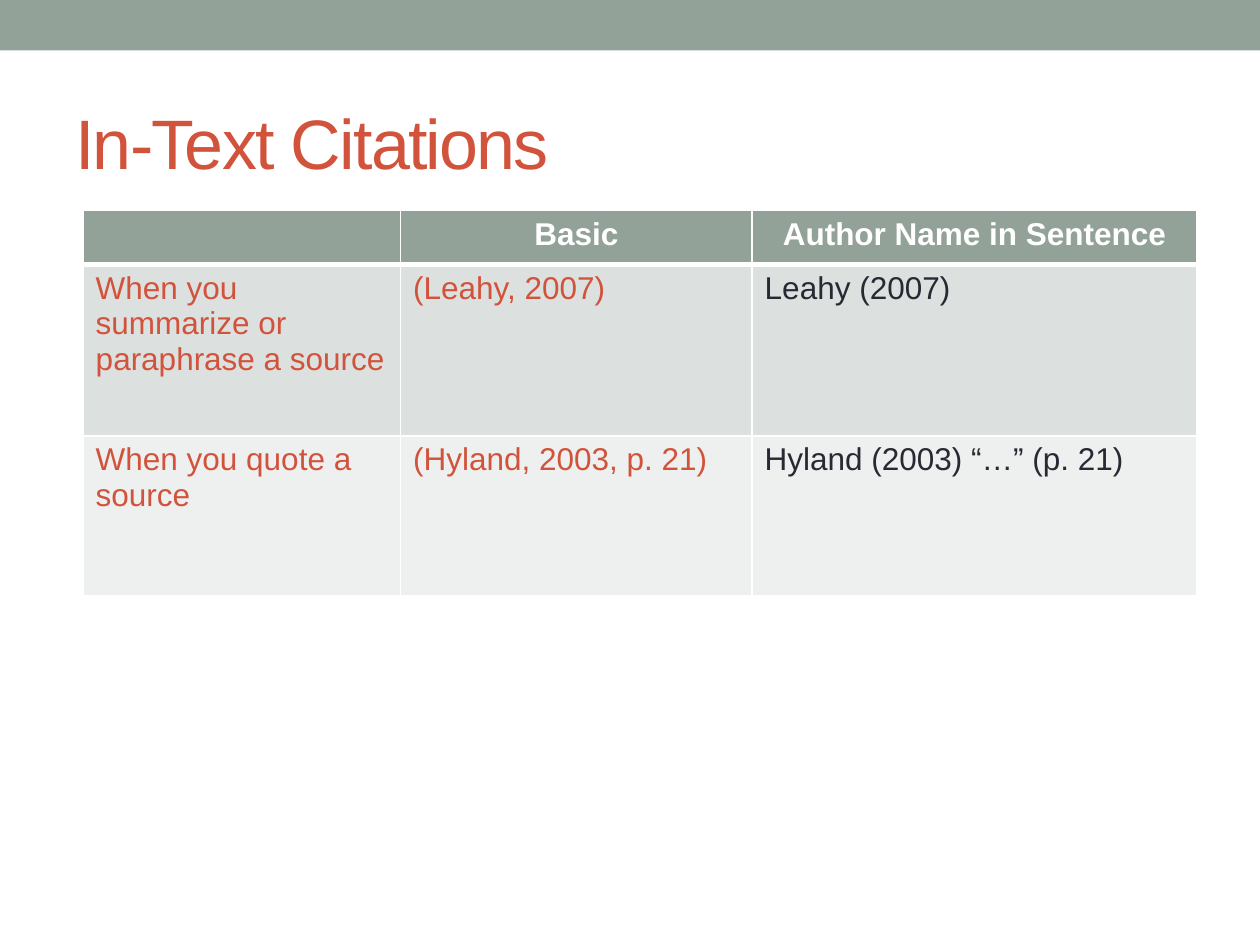
from pptx import Presentation
from pptx.dml.color import RGBColor
from pptx.enum.shapes import MSO_SHAPE as Shape
from pptx.enum.text import MSO_ANCHOR as Anchor, PP_ALIGN as Align
from pptx.oxml import parse_xml
from pptx.oxml.ns import nsdecls
from pptx.util import Inches, Pt

FONT = "Arial"
SAGE = RGBColor(0x93, 0xA2, 0x99)
RUST = RGBColor(0xD2, 0x53, 0x3C)
INK = RGBColor(0x29, 0x29, 0x34)
WHITE = RGBColor(0xFF, 0xFF, 0xFF)
ROW_FILLS = [SAGE, RGBColor(0xDC, 0xE0, 0xDE), RGBColor(0xEE, 0xF0, 0xEF)]

COLUMN_WIDTHS = [2.52, 2.79, 3.53]
ROW_HEIGHTS = [0.43, 1.36, 1.27]
CITATIONS = [
    ["", "Basic", "Author Name in Sentence"],
    ["When you summarize or paraphrase a source", "(Leahy, 2007)", "Leahy (2007)"],
    ["When you quote a source", "(Hyland, 2003, p. 21)", "Hyland (2003) “…” (p. 21)"],
]


def style_font(font, size, color, bold=False):
    font.name = FONT
    font.size = Pt(size)
    font.bold = bold
    font.color.rgb = color


def add_top_band(slide):
    band = slide.shapes.add_shape(Shape.RECTANGLE, 0, 0, Inches(10), Inches(0.4))
    band.shadow.inherit = False
    band.fill.solid()
    band.fill.fore_color.rgb = SAGE
    band.line.fill.background()


def add_title(slide, wording):
    title = slide.shapes.add_textbox(Inches(0.5), Inches(0.58), Inches(9), Inches(1.08))
    frame = title.text_frame
    frame.word_wrap = True
    frame.vertical_anchor = Anchor.MIDDLE
    frame.text = wording
    font = frame.paragraphs[0].runs[0].font
    style_font(font, 40, RUST)
    font._element.set("spc", "-100")  # letter spacing of -1 pt


def set_borders(cell, widths):
    """Draw white borders; widths are points for left, right, top, bottom."""
    properties = cell._tc.get_or_add_tcPr()
    for position, (side, width) in enumerate(zip("LRTB", widths)):
        border = parse_xml(
            f'<a:ln{side} {nsdecls("a")} w="{Pt(width)}"><a:solidFill>'
            f'<a:srgbClr val="{WHITE}"/></a:solidFill></a:ln{side}>'
        )
        properties.insert(position, border)


def fill_cell(cell, wording, row, column):
    is_header = row == 0
    cell.fill.solid()
    cell.fill.fore_color.rgb = ROW_FILLS[row]
    # The rule between header and body is thicker
    set_borders(cell, [1, 1, 3 if row == 1 else 1, 3 if is_header else 1])
    if not wording:
        return
    cell.text_frame.text = wording
    paragraph = cell.text_frame.paragraphs[0]
    paragraph.alignment = Align.CENTER if is_header else Align.LEFT
    body_color = INK if column == 2 else RUST
    style_font(paragraph.runs[0].font, 18, WHITE if is_header else body_color, is_header)


def add_citation_table(slide):
    citation_table = slide.shapes.add_table(
        len(ROW_HEIGHTS), len(COLUMN_WIDTHS), Inches(0.66), Inches(1.67),
        Inches(sum(COLUMN_WIDTHS)), Inches(sum(ROW_HEIGHTS)),
    ).table
    for column, width in zip(citation_table.columns, COLUMN_WIDTHS):
        column.width = Inches(width)
    for row, height in zip(citation_table.rows, ROW_HEIGHTS):
        row.height = Inches(height)
    for r, wordings in enumerate(CITATIONS):
        for c, wording in enumerate(wordings):
            fill_cell(citation_table.cell(r, c), wording, r, c)


def main():
    deck = Presentation()
    deck.slide_width, deck.slide_height = Inches(10), Inches(7.5)
    slide = deck.slides.add_slide(deck.slide_layouts[6])
    add_top_band(slide)
    add_title(slide, "In-Text Citations")
    add_citation_table(slide)
    deck.save("out.pptx")


if __name__ == "__main__":
    main()
